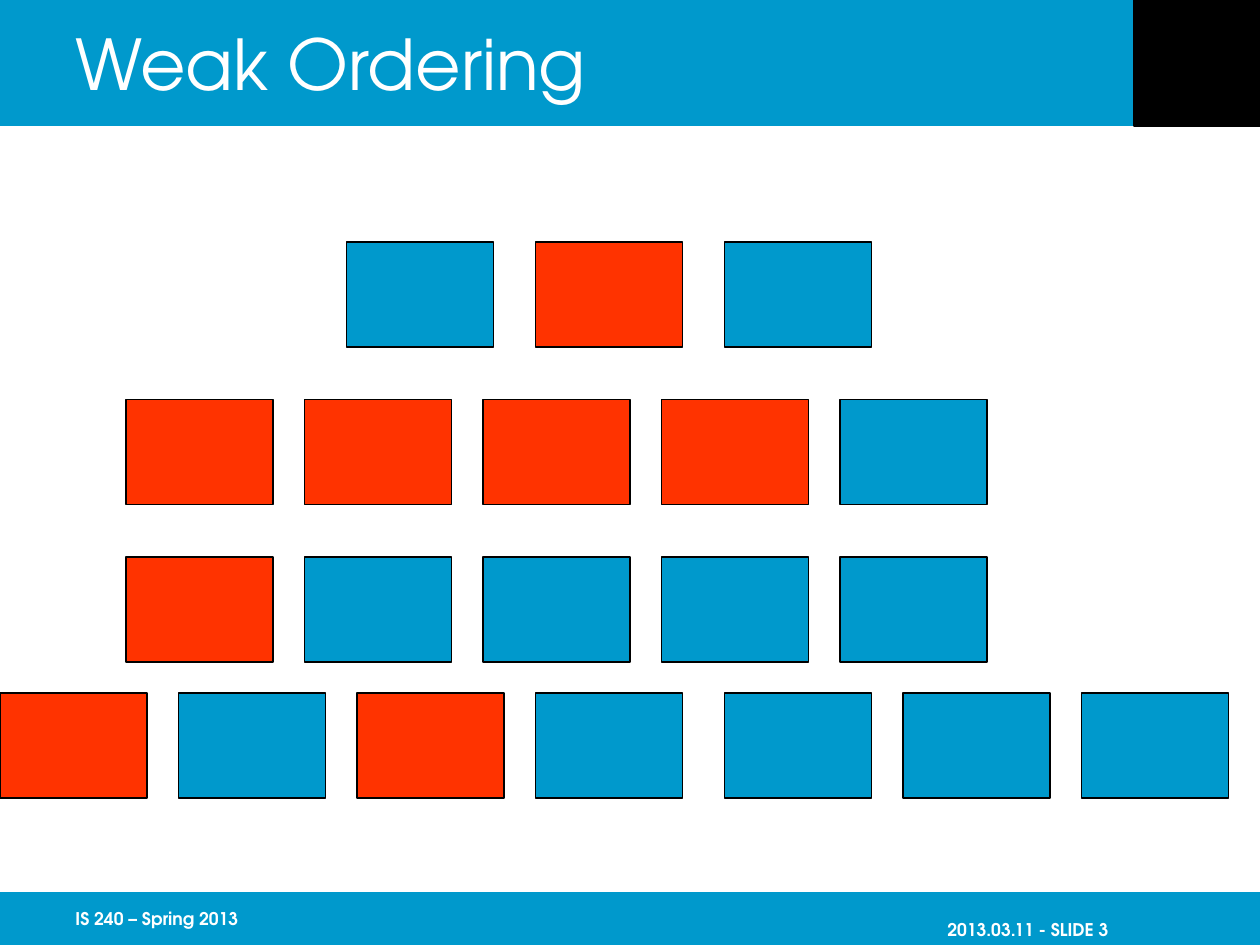
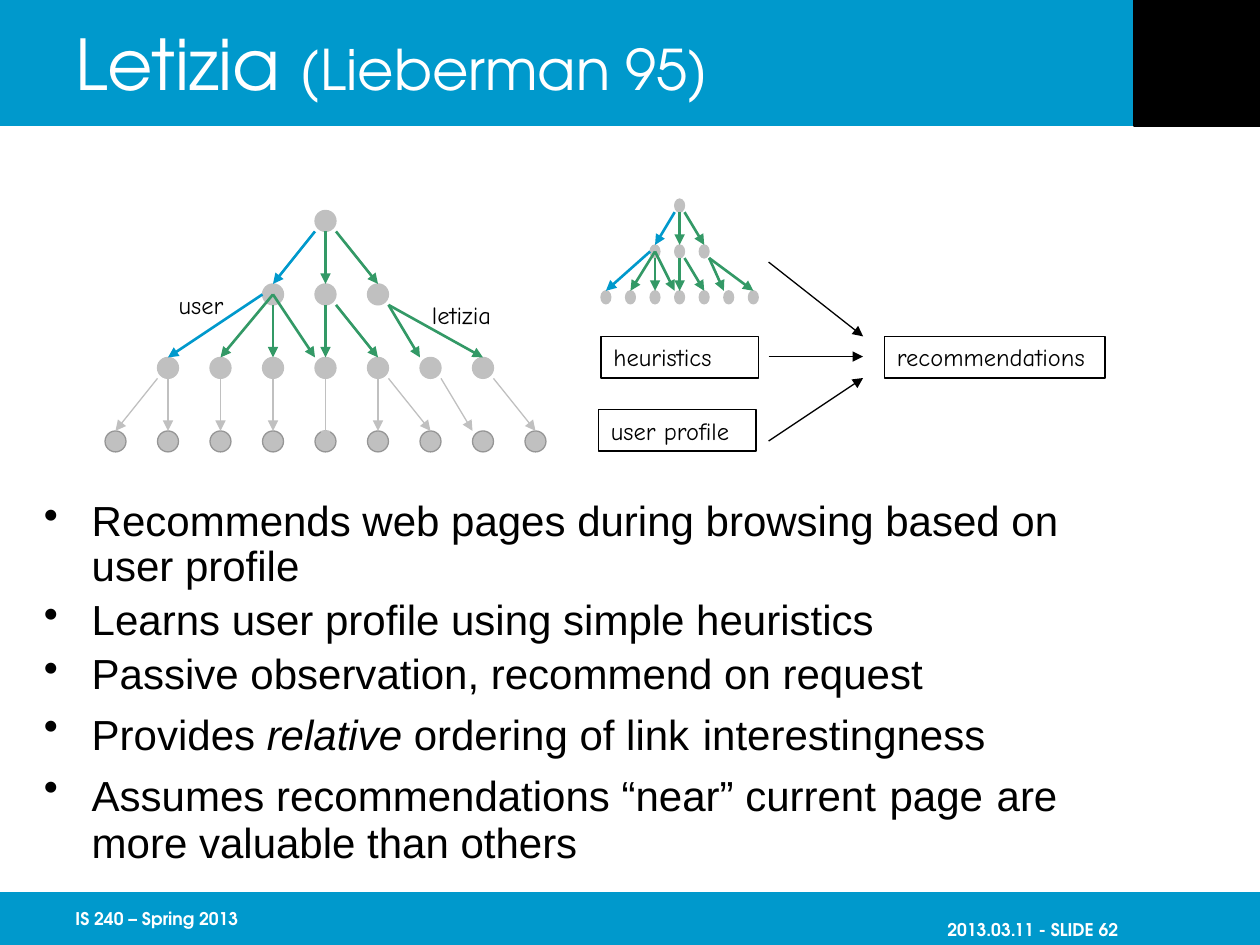
from pptx import Presentation
from pptx.dml.color import RGBColor
from pptx.enum.shapes import MSO_CONNECTOR, MSO_SHAPE
from pptx.enum.text import MSO_ANCHOR as Anchor
from pptx.oxml.ns import qn
from pptx.util import Inches, Pt
from lxml.etree import SubElement

COLORS = {
    "blue": "0099CC",
    "red": "FF3300",
    "green": "339966",
    "gray": "C0C0C0",
    "dark_gray": "969696",
    "black": "000000",
    "white": "FFFFFF",
}
HEAD_FONT, BODY_FONT, LABEL_FONT = "TeX Gyre Adventor", "Arial", "Comic Neue"
UNIT = 1 / 12  # grid step in inches for the boxes and the tree


def color(name):
    return RGBColor.from_string(COLORS[name])


# Basic parts
def add_span(para, text, font=BODY_FONT, size=24, ink="black", bold=False, italic=False):
    span = para.add_run()
    span.text = text
    span.font.name = font
    span.font.size = Pt(size)
    span.font.color.rgb = color(ink)
    span.font.bold = bold
    span.font.italic = italic


def set_frame(frame, wrap=True, anchor=Anchor.MIDDLE, insets=(0.1, 0.05, 0.1, 0.05)):
    frame.word_wrap = wrap
    frame.vertical_anchor = anchor
    frame.margin_left, frame.margin_top, frame.margin_right, frame.margin_bottom = map(Inches, insets)
    return frame


def add_text_box(page, box, **layout):
    return set_frame(page.shapes.add_textbox(*map(Inches, box)).text_frame, **layout)


def add_shape(page, box, fill=None, line=None, kind=MSO_SHAPE.RECTANGLE):
    shape = page.shapes.add_shape(kind, *map(Inches, box))
    shape.shadow.inherit = False
    if fill:
        shape.fill.solid()
        shape.fill.fore_color.rgb = color(fill)
    else:
        shape.fill.background()
    if line:
        shape.line.color.rgb = color(line)
        shape.line.width = Pt(0.75)
    else:
        shape.line.fill.background()
    return shape


def add_arrow(page, start, end, ink="black", width=0.75):
    arrow = page.shapes.add_connector(MSO_CONNECTOR.STRAIGHT, *map(Inches, (*start, *end)))
    arrow.line.color.rgb = color(ink)
    arrow.line.width = Pt(width)
    SubElement(arrow.line._get_or_add_ln(), qn("a:tailEnd"), type="triangle")
    SubElement(arrow._element.spPr, qn("a:effectLst"))


# Bands, title and footer
def add_page(deck, number, title, subtitle=""):
    page = deck.slides.add_slide(deck.slide_layouts[6])
    add_shape(page, (0, 0, 10, 1), "blue")
    add_shape(page, (0, 7.08, 10, 0.42), "blue")
    add_shape(page, (9, 0, 1, 1), "black", "black")

    heading = add_text_box(page, (0.5, 0, 8.5, 1)).paragraphs[0]
    add_span(heading, title, HEAD_FONT, 40, "white")
    if subtitle:
        add_span(heading, subtitle, HEAD_FONT, 32, "white")

    footers = [
        ((0.5, 7.08, 2.08, 0.42), "IS 240 – Spring 2013"),
        ((7.42, 7.25, 2.08, 0.25), f"2013.03.11 - SLIDE {number}"),
    ]
    for box, text in footers:
        frame = add_text_box(page, box, insets=(0.1, 0, 0, 0))
        add_span(frame.paragraphs[0], text, HEAD_FONT, 10, "white", bold=True)
    return page


# Row of equal boxes, one letter per box: r is red, b is blue
def add_box_row(page, left, top, pattern, pitch=17 * UNIT):
    for index, letter in enumerate(pattern):
        box = (left + index * pitch, top, 14 * UNIT, 10 * UNIT)
        add_shape(page, box, "red" if letter == "r" else "blue", "black")


def build_weak_ordering(deck):
    page = add_page(deck, 3, "Weak Ordering")
    add_box_row(page, 2.75, 1.92, "brb", pitch=1.5)
    add_box_row(page, 1, 3.17, "rrrrb")
    add_box_row(page, 1, 4.42, "rbbbb")
    add_box_row(page, 0, 5.5, "rbrb")
    add_box_row(page, 5.75, 5.5, "bbb")


# Link tree on a grid: nodes are 2 units wide, 5 apart, levels 7 apart
LEVELS = [range(15, 16, 5), range(10, 21, 5), range(0, 31, 5), range(-5, 36, 5)]
USER_LINKS = [(15, 2, 11, 7), (10, 8, 1, 14)]
AGENT_LINKS = [
    (16, 2, 16, 7), (17, 2, 21, 7),
    (16, 9, 16, 14), (17, 9, 21, 14),
    (11, 8, 6, 14), (11, 9, 11, 14), (11, 8, 15, 14),
    (22, 9, 31, 14), (22, 9, 25, 14),
]
UNSEEN_LINKS = [
    (0, 16, -4, 21), (16, 16, 16, 22), (22, 16, 26, 21), (27, 16, 30, 21), (32, 16, 36, 21),
    *((x, 16, x, 21) for x in (1, 6, 11, 21)),
]


def add_tree(page, left, top, step_x=UNIT, step_y=UNIT, unseen=False):
    def place(x, y):
        return left + x * step_x, top + y * step_y

    for level, columns in enumerate(LEVELS if unseen else LEVELS[:3]):
        for column in columns:
            box = (*place(column, 7 * level), 2 * step_x, 2 * step_y)
            add_shape(page, box, "gray", "dark_gray" if level == 3 else "gray", MSO_SHAPE.OVAL)

    groups = [(USER_LINKS, "blue", 1.5), (AGENT_LINKS, "green", 1.5)]
    if unseen:
        groups.append((UNSEEN_LINKS, "gray", 0.75))
    for links, ink, width in groups:
        for x1, y1, x2, y2 in links:
            add_arrow(page, place(x1, y1), place(x2, y2), ink, width)


# Inputs on the left, recommendations on the right
def add_flow(page, left, top):
    add_tree(page, left, top, step_x=0.039, step_y=0.052)
    labels = [
        (0, 1.09, 1.25, "heuristics"),
        (-0.02, 1.67, 1.25, "user profile"),
        (2.25, 1.09, 1.75, "recommendations"),
    ]
    for x, y, width, text in labels:
        shape = add_shape(page, (left + x, top + y, width, 0.33), line="black")
        para = set_frame(shape.text_frame, wrap=False).paragraphs[0]
        para.alignment = 1
        add_span(para, text, LABEL_FONT, 14)
    for start, end in [(0.5, 1.09), (1.25, 1.25), (1.92, 1.42)]:
        add_arrow(page, (left + 1.33, top + start), (left + 2.08, top + end))


def add_bullets(page, box, items):
    frame = add_text_box(page, box, anchor=Anchor.TOP, insets=(0.1, 0.05, 0.1, 0))
    for index, spans in enumerate(items):
        para = frame.paragraphs[0] if index == 0 else frame.add_paragraph()
        props = para._p.get_or_add_pPr()
        props.set("marL", str(Inches(0.38)))
        props.set("indent", str(Inches(-0.38)))
        SubElement(props, qn("a:buChar"), char="•")
        para.line_spacing = 0.9
        if index:
            para.space_before = Pt(5)
        for text, look in spans:
            add_span(para, text, **look)


def build_letizia(deck):
    page = add_page(deck, 62, "Letizia ", "(Lieberman 95)")
    plain, wide = {}, {"size": 28}
    add_bullets(page, (0.25, 3.92, 8.94, 2.92), [
        [("Recommends web pages during browsing based on user profile", plain)],
        [("Learns user profile using simple heuristics", plain)],
        [("Passive observation, recommend on request", plain)],
        [("Provides ", plain), ("relative", {"italic": True}), (" ordering of link", plain),
         (" ", wide), ("interestingness", plain)],
        [("Assumes recommendations “near” current", plain), (" ", wide), ("page", plain),
         (" ", wide), ("are more valuable than others", plain)],
    ])
    add_tree(page, 1.25, 1.67, unseen=True)
    for box, text in [((1.32, 2.25, 0.6, 0.33), "user"), ((3.33, 2.33, 0.77, 0.33), "letizia")]:
        add_span(add_text_box(page, box, wrap=False).paragraphs[0], text, LABEL_FONT, 14)
    add_flow(page, 4.77, 1.58)


def main():
    deck = Presentation()
    deck.slide_width, deck.slide_height = Inches(10), Inches(7.5)
    build_weak_ordering(deck)
    build_letizia(deck)
    deck.save("out.pptx")


if __name__ == "__main__":
    main()
